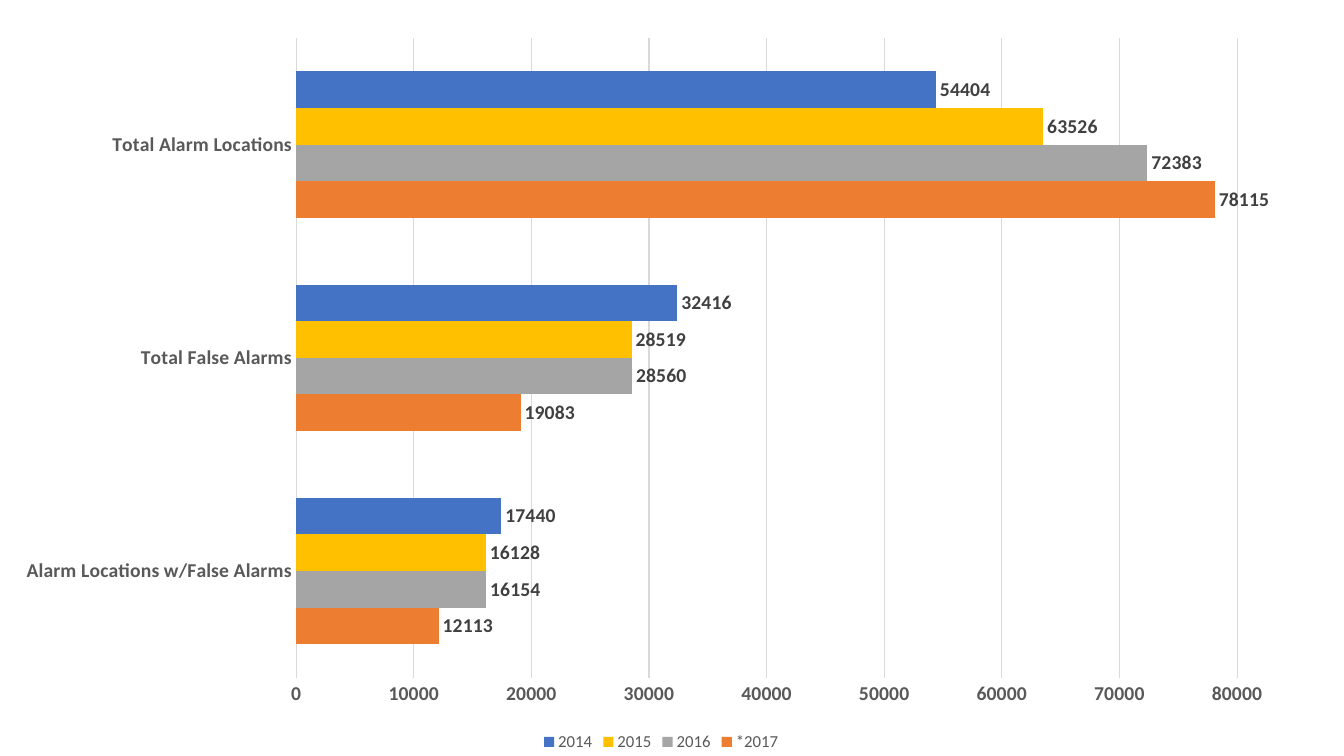
from lxml.etree import SubElement
from pptx import Presentation
from pptx.chart.data import CategoryChartData
from pptx.dml.color import RGBColor
from pptx.enum.chart import XL_CHART_TYPE as ChartType
from pptx.enum.chart import XL_LABEL_POSITION as LabelPosition
from pptx.enum.chart import XL_LEGEND_POSITION as LegendPosition
from pptx.enum.chart import XL_TICK_MARK as TickMark
from pptx.oxml.ns import qn
from pptx.util import Pt

COLORS = {
    "text": "595959",
    "label": "404040",
    "rule": "D9D9D9",
    "*2017": "ED7D31",
    "2016": "A5A5A5",
    "2015": "FFC000",
    "2014": "4472C4",
}
CATEGORIES = ["Alarm Locations w/False Alarms", "Total False Alarms", "Total Alarm Locations"]
COUNTS = {
    "*2017": (12113, 19083, 78115),
    "2016": (16154, 28560, 72383),
    "2015": (16128, 28519, 63526),
    "2014": (17440, 32416, 54404),
}
PLOT_AREA = {"x": 0.224, "y": 0.019, "w": 0.756, "h": 0.874}


def color(name):
    return RGBColor.from_string(COLORS[name])


def style_font(font, size=14, bold=True, name="text"):
    font.name = "Calibri"
    font.size = Pt(size)
    font.bold = bold
    font.color.rgb = color(name)


def style_line(line):
    line.color.rgb = color("rule")
    line.width = Pt(0.75)


def place_plot(chart, fractions):
    plot_area = chart.plots[0]._element.getparent()
    for old_layout in plot_area.findall(qn("c:layout")):
        plot_area.remove(old_layout)
    layout = SubElement(plot_area, qn("c:layout"))
    plot_area.insert(0, layout)
    manual = SubElement(layout, qn("c:manualLayout"))
    settings = {"layoutTarget": "inner", "xMode": "edge", "yMode": "edge", **fractions}
    for tag, value in settings.items():
        SubElement(manual, qn(f"c:{tag}")).set("val", str(value))


def style_axes(chart):
    for axis in (chart.category_axis, chart.value_axis):
        axis.major_tick_mark = TickMark.NONE
        axis.minor_tick_mark = TickMark.NONE
        style_font(axis.tick_labels.font)
    chart.category_axis.has_major_gridlines = False
    style_line(chart.category_axis.format.line)
    values = chart.value_axis
    values.minimum_scale = 0
    values.maximum_scale = 85000
    values.major_unit = 10000
    values.has_major_gridlines = True
    style_line(values.major_gridlines.format.line)
    values.format.line.fill.background()


def style_bars(plot):
    plot.gap_width = 182
    plot.overlap = 0
    plot.vary_by_categories = False
    for series in plot.series:
        series.format.fill.solid()
        series.format.fill.fore_color.rgb = color(series.name)
        series.invert_if_negative = False
        labels = series.data_labels
        labels.show_value = True
        labels.position = LabelPosition.OUTSIDE_END
        style_font(labels.font, name="label")


def add_alarm_chart(page, left, top, width, height):
    data = CategoryChartData()
    data.categories = CATEGORIES
    for year, counts in COUNTS.items():
        data.add_series(year, counts)
    chart = page.shapes.add_chart(
        ChartType.BAR_CLUSTERED, Pt(left), Pt(top), Pt(width), Pt(height), data
    ).chart
    chart.has_title = False
    chart.font.name = "Calibri"
    chart.font.size = Pt(10)
    place_plot(chart, PLOT_AREA)
    style_axes(chart)
    style_bars(chart.plots[0])
    chart.has_legend = True
    chart.legend.position = LegendPosition.BOTTOM
    chart.legend.include_in_layout = False
    style_font(chart.legend.font, size=12, bold=False)


def main():
    deck = Presentation()
    deck.slide_width = Pt(960)
    deck.slide_height = Pt(540)
    page = deck.slides.add_slide(deck.slide_layouts[6])
    add_alarm_chart(page, left=0, top=17.3, width=944.6, height=522.7)
    deck.save("out.pptx")


if __name__ == "__main__":
    main()
